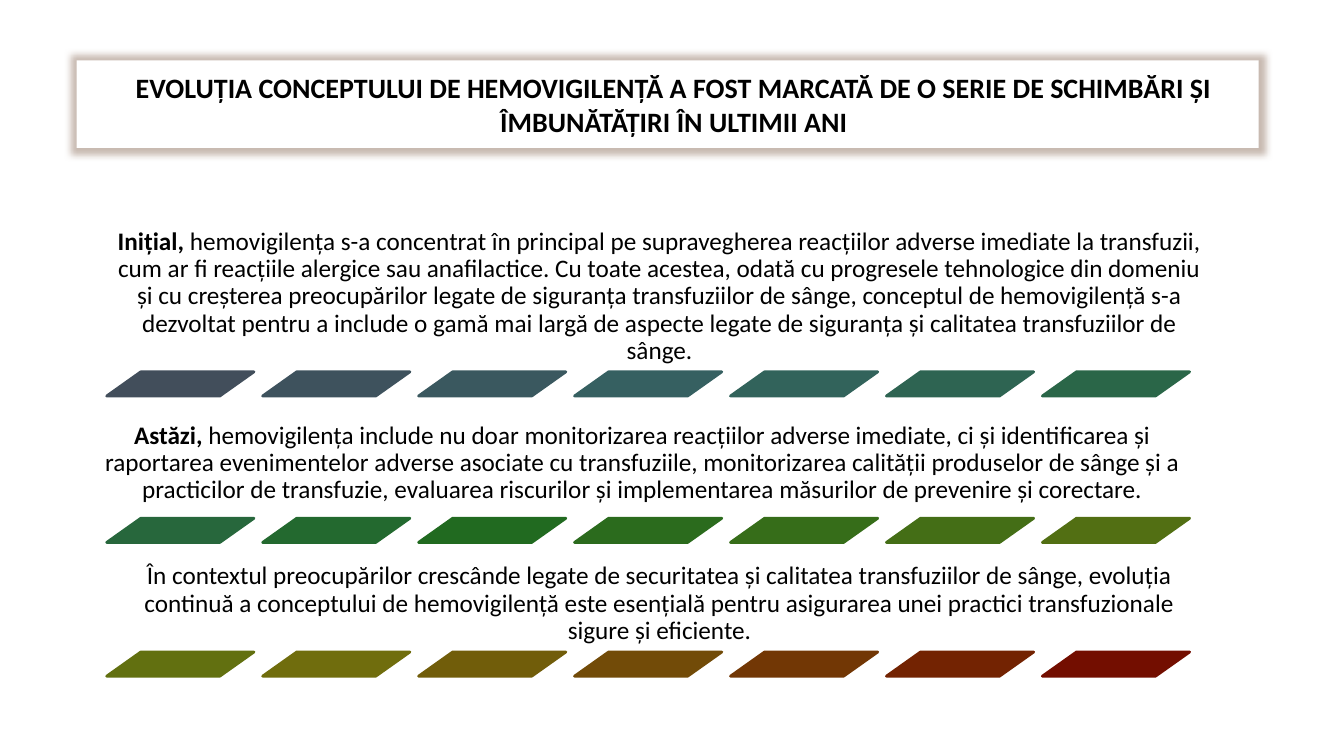
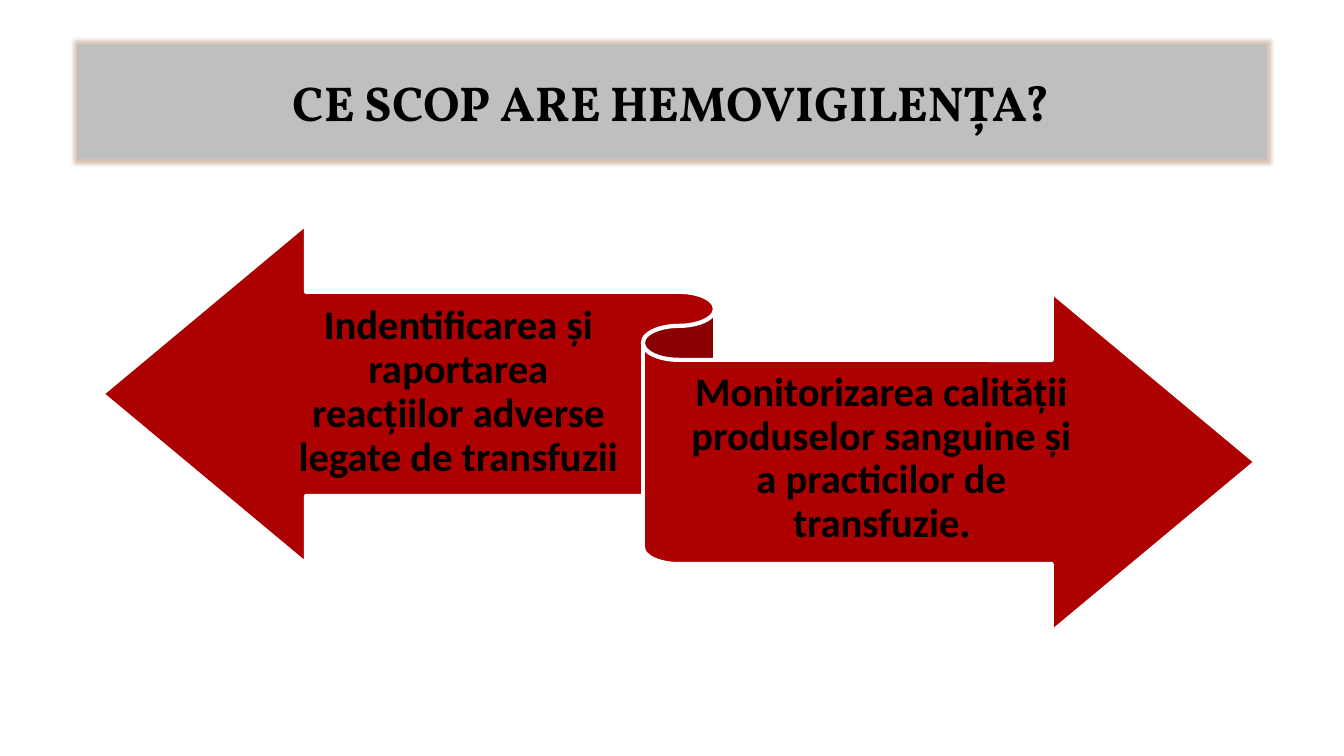
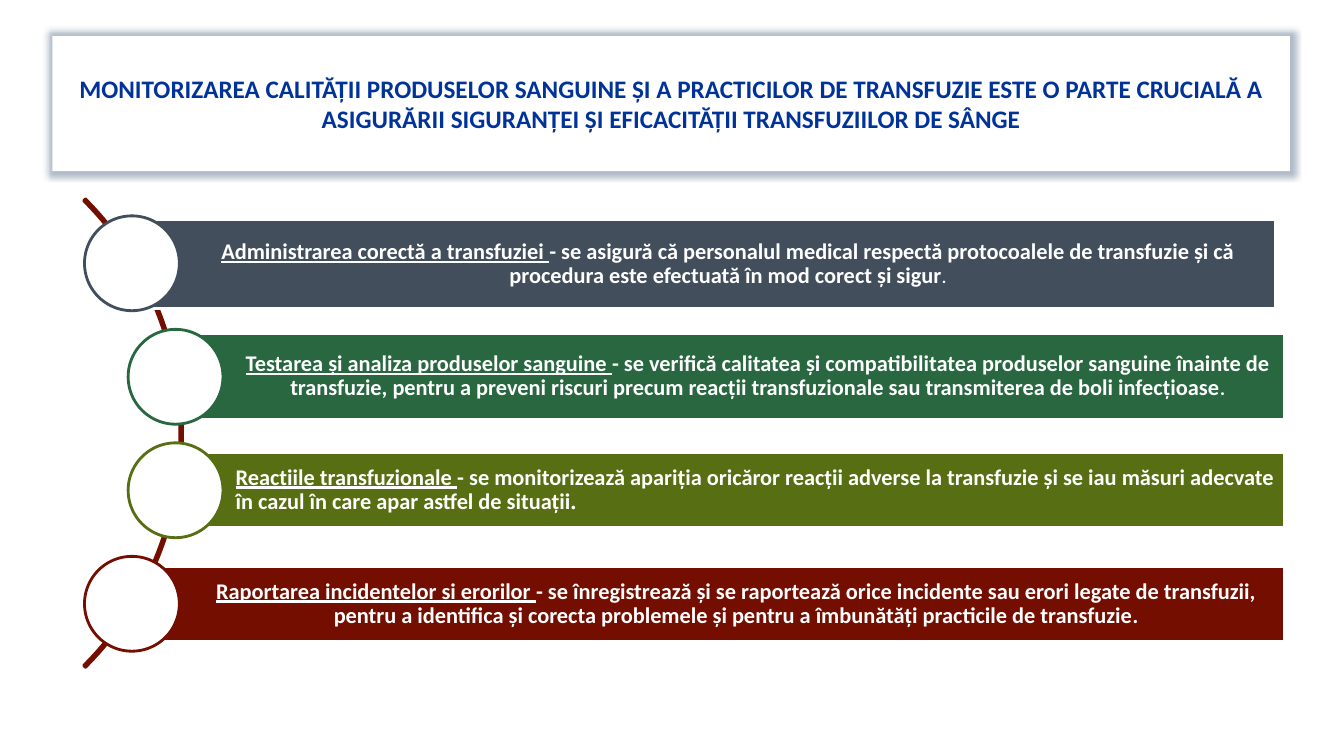
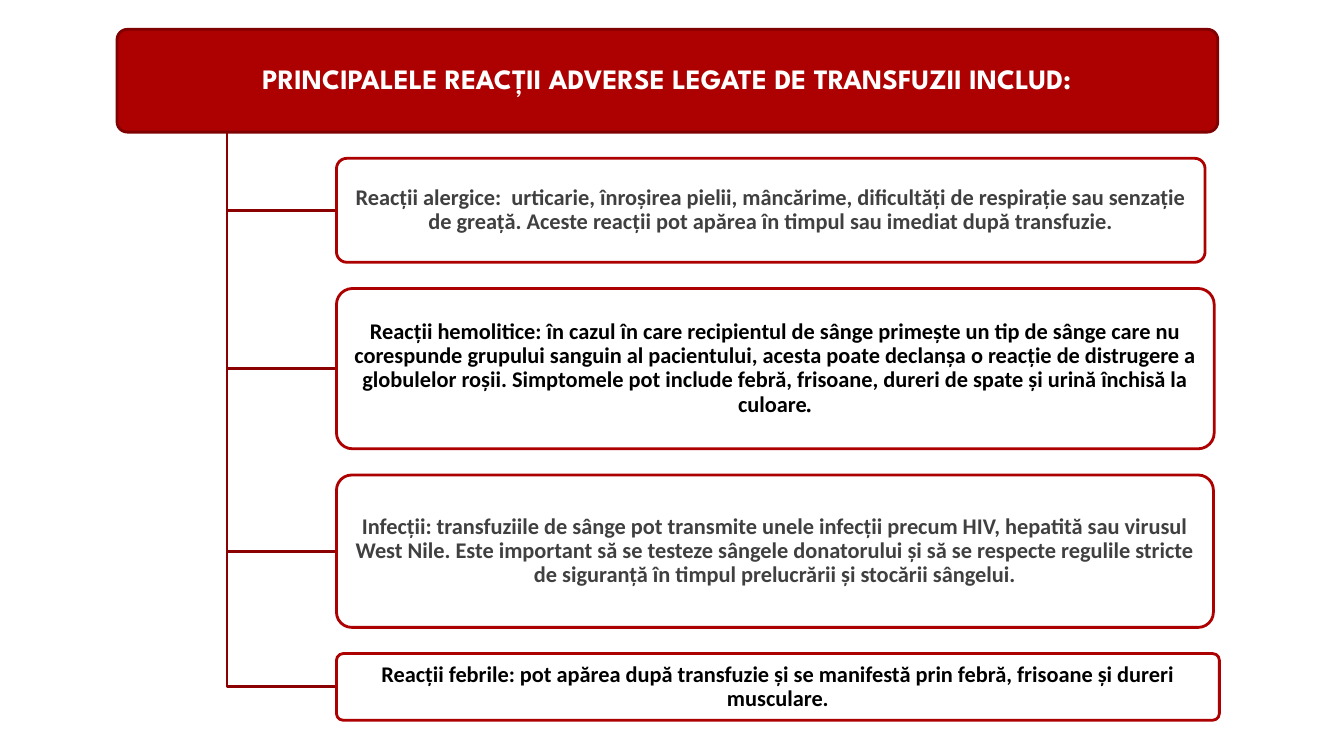
from lxml.etree import SubElement
from pptx import Presentation
from pptx.dml.color import RGBColor
from pptx.enum.shapes import MSO_SHAPE
from pptx.enum.text import MSO_ANCHOR, PP_ALIGN
from pptx.oxml.ns import qn
from pptx.util import Cm, Pt

tint = RGBColor.from_string
RED, WINE, WHITE, BLACK, GREY = "AD0101", "8B0101", "FFFFFF", "000000", "404040"


def form(slide, kind, box, fill, line, width=2):
    shape = slide.shapes.add_shape(kind, *[Cm(n) for n in box])
    shape.shadow.inherit = False
    if fill:
        shape.fill.solid()
        shape.fill.fore_color.rgb = tint(fill)
    else:
        shape.fill.background()
    shape.line.color.rgb = tint(line)
    shape.line.width = Pt(width)
    return shape


def write(shape, runs, size, ink, pads, anchor=MSO_ANCHOR.MIDDLE,
          align=PP_ALIGN.CENTER, font="Calibri", lead=0.9):
    frame = shape.text_frame
    frame.word_wrap = True
    frame.vertical_anchor = anchor
    (frame.margin_left, frame.margin_top,
     frame.margin_right, frame.margin_bottom) = [Cm(n) for n in pads]
    para = frame.paragraphs[0]
    para.alignment = align
    para.line_spacing = lead
    for text, marks, *own in runs:
        run = para.add_run()
        run.text = text
        run.font.name = "Times New Roman" if "t" in marks else font
        run.font.size = Pt(own[0] if own else size)
        run.font.color.rgb = tint(ink)
        run.font.bold = "b" in marks
        run.font.italic = "i" in marks
        run.font.underline = "u" in marks


deck = Presentation()
deck.slide_width, deck.slide_height = Cm(33.87), Cm(19.05)

heads = [
    ((1.93, 1.52, 29.79, 2.21), 0.56, 20, "Calibri", BLACK, WHITE, ("C8BAB1", 10), 1,
     "EVOLUȚIA CONCEPTULUI DE HEMOVIGILENȚĂ A FOST MARCATĂ DE O SERIE DE SCHIMBĂRI ȘI ÎMBUNĂTĂȚIRI ÎN ULTIMII ANI"),
    ((1.93, 1.12, 30, 2.9), 0.25, 35, "Vollkorn", BLACK, "BFBFBF", ("D9C5B8", 5), 1,
     "CE SCOP ARE HEMOVIGILENȚA?"),
    ((1.32, 0.91, 31.19, 3.4), 0.25, 18, "Calibri", "003399", WHITE, ("B0BCC8", 8), 1,
     "MONITORIZAREA CALITĂȚII PRODUSELOR SANGUINE ȘI A PRACTICILOR DE TRANSFUZIE ESTE O PARTE CRUCIALĂ A ASIGURĂRII SIGURANȚEI ȘI EFICACITĂȚII TRANSFUZIILOR DE SÂNGE"),
    ((3.02, 0.81, 27.58, 2.44), 0.25, 20, "League Spartan", WHITE, None, None, 0.9,
     "PRINCIPALELE REACȚII ADVERSE LEGATE DE TRANSFUZII INCLUD:"),
]
slides = []
for box, left, size, font, ink, fill, glow, lead, text in heads:
    slide = deck.slides.add_slide(deck.slide_layouts[5])
    title = slide.shapes.title
    title.left, title.top, title.width, title.height = [Cm(n) for n in box]
    if fill:
        title.fill.solid()
        title.fill.fore_color.rgb = tint(fill)
    if glow:
        title.shadow.inherit = False
        list_tag = title.element.spPr.find(qn("a:effectLst"))
        halo = SubElement(list_tag, qn("a:glow"), rad=str(Pt(glow[1])))
        SubElement(halo, qn("a:srgbClr"), val=glow[0])
    write(title, [(text, "b")], size, ink, (left, 0.13, 0.25, 0.13), font=font, lead=lead)
    slides.append(slide)
story, goal, checks, harms = slides

parts = [
    ((2.69, 5.41, 27.86, 3.96), 9.37,
     "424E5B 3E525D 3A585F 366061 32635B 2E6452 2A6648",
     [("Inițial, ", "b"),
      ("hemovigilența s-a concentrat în principal pe supravegherea reacțiilor adverse imediate la transfuzii, cum ar fi reacțiile alergice sau anafilactice. Cu toate acestea, odată cu progresele tehnologice din domeniu și cu creșterea preocupărilor legate de siguranța transfuziilor de sânge, conceptul de hemovigilență s-a dezvoltat pentru a include o gamă mai largă de aspecte legate de siguranța și calitatea transfuziilor de sânge.", "")]),
    ((2.26, 10.06, 27.86, 2.82), 13.06,
     "27673C 23692F 216A20 2B6B1D 366D19 446E16 526F13",
     [("Astăzi, ", "b"),
      ("hemovigilența include nu doar monitorizarea reacțiilor adverse imediate, ci și identificarea și raportarea evenimentelor adverse asociate cu transfuziile, monitorizarea calității produselor de sânge și a practicilor de transfuzie, evaluarea riscurilor și implementarea măsurilor de prevenire și corectare.", "")]),
    ((2.69, 13.94, 27.86, 2.49), 16.43,
     "627010 706D0D 715D0A 724B08 723705 732302 730E00",
     [("În contextul preocupărilor crescânde legate de securitatea și calitatea transfuziilor de sânge, evoluția continuă a conceptului de hemovigilență este esențială pentru asigurarea unei practici transfuzionale sigure și eficiente.", "")]),
]
for box, top, hues, runs in parts:
    note = story.shapes.add_textbox(*[Cm(n) for n in box])
    write(note, runs, 18, BLACK, (0.18,) * 4, MSO_ANCHOR.BOTTOM)
    for col, hue in enumerate(hues.split()):
        dash = form(story, MSO_SHAPE.PARALLELOGRAM,
                    (2.69 + 3.93 * col, top, 3.71, 0.61), hue, hue)
        dash.adjustments[0] = 1.41

form(goal, MSO_SHAPE.LEFT_RIGHT_RIBBON, (2.57, 5.64, 29.08, 10.29), RED, WHITE, 3)
goals = [
    ((7.26, 7.34, 8.59, 5.11),
     [("Indentificarea și raportarea reacțiilor adverse legate de transfuzii", "b")]),
    ((17.15, 9.02, 10.13, 5.11),
     [("Monitorizarea calității produselor sanguine și a practicilor de transfuzie", "b"),
      (".", "bt")]),
]
for box, runs in goals:
    note = goal.shapes.add_textbox(*[Cm(n) for n in box])
    write(note, runs, 29, BLACK, (0, 0.28, 0, 0.3))

arc = form(checks, MSO_SHAPE.BLOCK_ARC, (-12.09, 2.57, 16.69, 16.69), None, "730E00")
for slot, turn in enumerate((189, 27, 0.004)):
    arc.adjustments[slot] = turn
bars = [
    ((3.12, 5.54, 29.03, 2.24), 2.13, "424E5B", PP_ALIGN.CENTER,
     "Administrarea corectă a transfuziei ",
     "- se asigură că personalul medical respectă protocoalele de transfuzie și că procedura este efectuată în mod corect și sigur",
     (".", "b", 12)),
    ((4.42, 8.41, 27.94, 2.16), 3.23, "286740", PP_ALIGN.CENTER,
     "Testarea și analiza produselor sanguine ",
     "- se verifică calitatea și compatibilitatea produselor sanguine înainte de transfuzie, pentru a preveni riscuri precum reacții transfuzionale sau transmiterea de boli infecțioase",
     (".", "bi", 14)),
    ((4.42, 11.4, 27.94, 1.9), 3.23, "576F12", PP_ALIGN.LEFT,
     "Reacțiile transfuzionale ",
     "- se monitorizează apariția oricăror reacții adverse la transfuzie și se iau măsuri adecvate în cazul în care apar astfel de situații",
     (".", "bt")),
    ((3.33, 14.27, 29.03, 1.9), 2.13, "730E00", PP_ALIGN.CENTER,
     "Raportarea incidentelor și erorilor ",
     "- se înregistrează și se raportează orice incidente sau erori legate de transfuzii, pentru a identifica și corecta problemele și pentru a îmbunătăți practicile de transfuzie",
     (".", "bi")),
]
for row, (box, left, hue, align, lead, text, dot) in enumerate(bars):
    bar = form(checks, MSO_SHAPE.RECTANGLE, box, hue, WHITE)
    write(bar, [(lead, "bu"), (text, "b"), dot], 16, WHITE,
          (1.52, 0.1, 0.1, 0.1), align=align)
    form(checks, MSO_SHAPE.OVAL, (left, 5.44 + 2.86 * row, 2.39, 2.39), WHITE, hue)

panel = form(harms, MSO_SHAPE.ROUNDED_RECTANGLE, (2.95, 0.74, 27.74, 2.59), RED, "800101")
panel.adjustments[0] = 0.1
panel.element.addnext(harms.shapes.title.element)
cards = [
    (21.89, 2.62, GREY,
     [("Reacții alergice:  urticarie, înroșirea pielii, mâncărime, dificultăți de respirație sau senzație de greață. Aceste reacții pot apărea în timpul sau imediat după transfuzie.", "b")]),
    (22.12, 4.04, BLACK,
     [("Reacții hemolitice: în cazul în care recipientul de sânge primește un tip de sânge care nu corespunde grupului sanguin al pacientului, acesta poate declanșa o reacție de distrugere a globulelor roșii. Simptomele pot include febră, frisoane, dureri de spate și urină închisă la culoare", "b"),
      (".", "bit")]),
    (22.1, 3.84, GREY,
     [("Infecții: transfuziile de sânge pot transmite unele infecții precum HIV, hepatită sau virusul West Nile. Este important să se testeze sângele donatorului și să se respecte regulile stricte de siguranță în timpul prelucrării și stocării sângelui.", "b")]),
    (22.25, 1.68, BLACK,
     [("Reacții febrile: pot apărea după transfuzie și se manifestă prin febră, frisoane și dureri musculare.", "b")]),
]
base, gap, trunk, edge = 3.33, 0.66, 5.72, 8.48
top = base + gap
for width, height, ink, runs in cards:
    mid = top + height / 2
    pen = harms.shapes.build_freeform(Cm(trunk), Cm(base))
    pen.add_line_segments([(Cm(trunk), Cm(mid)), (Cm(edge), Cm(mid))], close=False)
    branch = pen.convert_to_shape()
    branch.shadow.inherit = False
    branch.fill.background()
    branch.line.color.rgb = tint(WINE)
    branch.line.width = Pt(2)
    card = form(harms, MSO_SHAPE.ROUNDED_RECTANGLE, (edge, top, width, height), WHITE, RED)
    card.adjustments[0] = 0.1
    write(card, runs, 16, ink, (0.08, 0.05, 0.08, 0.05))
    top += height + gap

deck.save("out.pptx")
